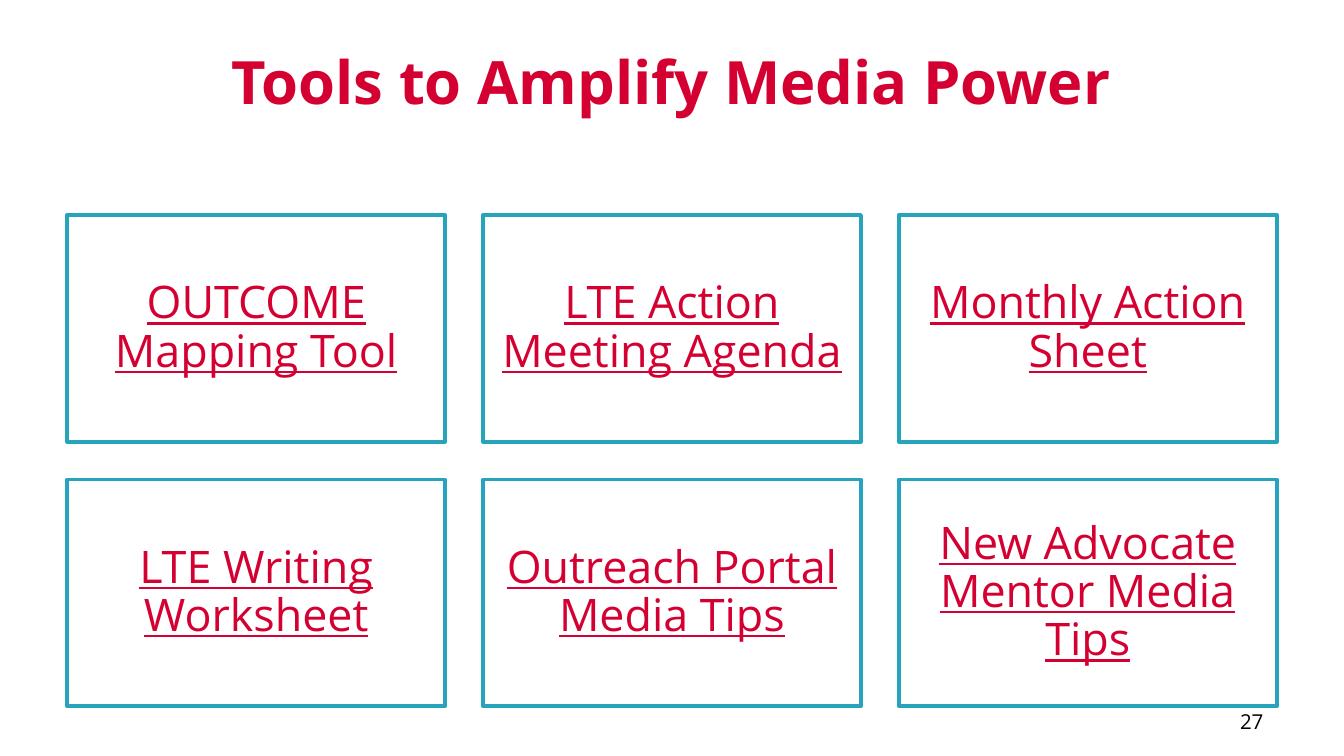
"""Build the slide of six media tools in a three-by-two grid."""
from pptx import Presentation
from pptx import util as u
from pptx.dml.color import RGBColor
from pptx.enum import shapes, text

RED = RGBColor(0xD5, 0x00, 0x32)
TEAL = RGBColor(0x25, 0xA4, 0xBC)
WHITE = RGBColor(0xFF, 0xFF, 0xFF)
BLACK = RGBColor(0x00, 0x00, 0x00)

TOOLS = [
    "OUTCOME Mapping Tool",
    "LTE Action Meeting Agenda",
    "Monthly Action Sheet",
    "LTE Writing Worksheet",
    "Outreach Portal Media Tips",
    "New Advocate Mentor Media Tips",
]
COLUMNS = 3
LEFT, TOP = 0.5, 1.6
CARD_W = 9 / 3.2
CARD_H = CARD_W * 0.6
GAP = CARD_W * 0.1


def write(sp, words, size, color, align):
    tf = sp.text_frame
    tf.word_wrap = True
    tf.vertical_anchor = text.MSO_ANCHOR.MIDDLE
    p = tf.paragraphs[0]
    p.alignment = align
    r = p.add_run()
    r.text = words
    r.font.name = "Open Sans"
    r.font.size = u.Pt(size)
    r.font.color.rgb = color
    return p, r


prs = Presentation()
prs.slide_width = u.Inches(10)
prs.slide_height = u.Inches(10 * 9 / 16)
s = prs.slides.add_slide(prs.slide_layouts[6])
s.background.fill.solid()
s.background.fill.fore_color.rgb = WHITE

title = s.shapes.add_textbox(u.Inches(0.95), u.Inches(0.13), u.Inches(8.09), u.Inches(0.94))
p, r = write(title, "Tools to Amplify Media Power", 32, RED, text.PP_ALIGN.CENTER)
r.font.bold = True

for i, tool in enumerate(TOOLS):
    row, col = divmod(i, COLUMNS)
    card = s.shapes.add_shape(
        shapes.MSO_SHAPE.RECTANGLE,
        u.Inches(LEFT + col * (CARD_W + GAP)),
        u.Inches(TOP + row * (CARD_H + GAP)),
        u.Inches(CARD_W),
        u.Inches(CARD_H),
    )
    card.shadow.inherit = False
    card.fill.solid()
    card.fill.fore_color.rgb = WHITE
    card.line.color.rgb = TEAL
    card.line.width = u.Pt(2)
    tf = card.text_frame
    tf.margin_left = tf.margin_right = tf.margin_top = tf.margin_bottom = u.Inches(0.1)
    p, r = write(card, tool, 24, RED, text.PP_ALIGN.CENTER)
    p.line_spacing = 0.9
    r.font.underline = True

number = s.shapes.add_textbox(u.Inches(7.17), u.Inches(5.22), u.Inches(2.33), u.Inches(0.3))
write(number, "27", 11, BLACK, text.PP_ALIGN.RIGHT)

prs.save("out.pptx")
